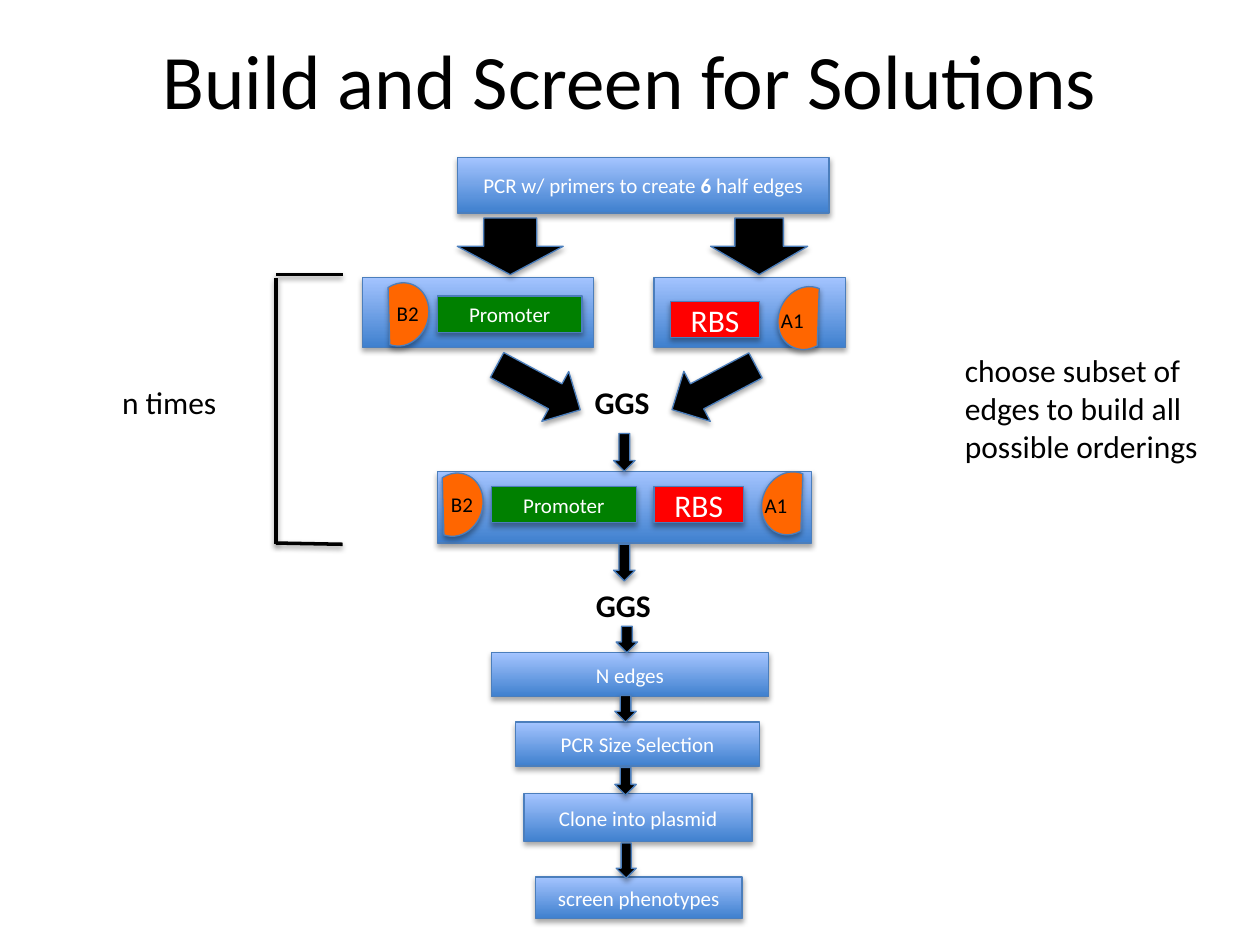
from typing import NamedTuple

from lxml.etree import SubElement
from pptx import Presentation
from pptx.dml.color import RGBColor
from pptx.enum.shapes import MSO_CONNECTOR, MSO_SHAPE
from pptx.enum.text import MSO_ANCHOR, MSO_AUTO_SIZE, PP_ALIGN
from pptx.oxml.ns import qn
from pptx.util import Inches, Pt

FONT = "Calibri"
BLACK, WHITE, OUTLINE = "000000", "FFFFFF", "4B7EBC"
GREEN, RED, ORANGE = "008000", "FF0000", "FF6600"
BLUE_GRADIENT = ("3F80CE", "A4C4FF")


class Box(NamedTuple):
    x: float
    y: float
    w: float
    h: float


class Step(NamedTuple):
    box: Box
    text: str


class Arrow(NamedTuple):
    box: Box
    kind: MSO_SHAPE = MSO_SHAPE.DOWN_ARROW
    rotation: float = 0


class Label(NamedTuple):
    box: Box
    text: str
    size: int = 18
    bold: bool = False


def rgb(value: str) -> RGBColor:
    return RGBColor.from_string(value)


def lengths(values) -> list:
    return [Inches(v) for v in values]


def add_shadow(sp, alpha: int, dist: float) -> None:
    effects = SubElement(sp._element.spPr, qn("a:effectLst"))
    shadow = SubElement(effects, qn("a:outerShdw"), blurRad=str(Pt(3.1)), dist=str(Pt(dist)),
                        dir="5400000", rotWithShape="0")
    color = SubElement(shadow, qn("a:srgbClr"), val=BLACK)
    SubElement(color, qn("a:alpha"), val=str(alpha * 1000))


def format_runs(tf, size: int, color: str, bold: bool = False) -> None:
    for p in tf.paragraphs:
        for r in p.runs:
            r.font.name, r.font.size, r.font.bold = FONT, Pt(size), bold
            r.font.color.rgb = rgb(color)


def add_shape(s, kind: MSO_SHAPE, box: Box, fill: str = "", text: str = "",
              size: int = 12, rotation: float = 0):
    """Add a shadowed shape; without a fill colour it takes the blue gradient."""
    sp = s.shapes.add_shape(kind, *lengths(box))
    sp.rotation = rotation
    if fill:
        sp.fill.solid()
        sp.fill.fore_color.rgb = rgb(fill)
    else:
        sp.fill.gradient()
        sp.fill.gradient_angle = 90
        for stop, color in zip(sp.fill.gradient_stops, BLUE_GRADIENT):
            stop.color.rgb = rgb(color)
    sp.line.color.rgb = rgb(OUTLINE)
    sp.line.width = Pt(0.75)
    add_shadow(sp, 35, 1.8)
    if text:
        tf = sp.text_frame
        tf.text = text
        tf.vertical_anchor = MSO_ANCHOR.MIDDLE
        tf.paragraphs[0].alignment = PP_ALIGN.CENTER
        format_runs(tf, size, WHITE)
    return sp


def add_label(s, label: Label):
    tb = s.shapes.add_textbox(*lengths(label.box))
    tf = tb.text_frame
    tf.word_wrap = True
    tf.auto_size = MSO_AUTO_SIZE.SHAPE_TO_FIT_TEXT
    tf.text = label.text
    format_runs(tf, label.size, BLACK, label.bold)
    return tb


def add_title(s, text: str) -> None:
    tf = add_label(s, Label(Box(0.5, 0, 9, 1.25), text, 44)).text_frame
    tf.auto_size = MSO_AUTO_SIZE.NONE
    tf.vertical_anchor = MSO_ANCHOR.MIDDLE
    tf.paragraphs[0].alignment = PP_ALIGN.CENTER


def add_promoter_edge(s, x: float, y: float) -> None:
    add_shape(s, MSO_SHAPE.CHORD, Box(x, y, 0.44, 0.51), ORANGE, rotation=199.9)
    add_shape(s, MSO_SHAPE.RECTANGLE, Box(x + 0.51, y + 0.11, 1.15, 0.29), GREEN, "Promoter")
    add_label(s, Label(Box(x + 0.09, y + 0.1, 0.58, 0.3), "B2", 12))


def add_rbs_edge(s, x: float, y: float) -> None:
    add_shape(s, MSO_SHAPE.RECTANGLE, Box(x, y + 0.12, 0.71, 0.29), RED, "RBS", 18)
    add_shape(s, MSO_SHAPE.CHORD, Box(x + 0.86, y, 0.44, 0.51), ORANGE, rotation=23.6)
    add_label(s, Label(Box(x + 0.78, y + 0.12, 0.47, 0.3), "A1", 12))


def add_line(s, *ends: float) -> None:
    c = s.shapes.add_connector(MSO_CONNECTOR.STRAIGHT, *lengths(ends))
    c.line.color.rgb = rgb(BLACK)
    c.line.width = Pt(2)
    add_shadow(c, 38, 1.6)


STEPS = [
    Step(Box(3.9, 5.18, 2.2, 0.35), "N edges"),
    Step(Box(4.09, 5.73, 1.94, 0.35), "PCR Size Selection"),
    Step(Box(4.16, 6.3, 1.81, 0.38), "Clone into plasmid"),
    Step(Box(4.25, 6.96, 1.64, 0.33), "screen phenotypes"),
]
ARROWS = [
    Arrow(Box(3.63, 1.73, 0.84, 0.45)),
    Arrow(Box(5.64, 1.73, 0.77, 0.45)),
    Arrow(Box(3.9, 2.85, 0.75, 0.45), MSO_SHAPE.RIGHT_ARROW, 28.3),
    Arrow(Box(5.29, 2.85, 0.75, 0.45), MSO_SHAPE.RIGHT_ARROW, 152.1),
    Arrow(Box(4.87, 3.44, 0.17, 0.3)),
    Arrow(Box(4.87, 4.32, 0.17, 0.29)),
    Arrow(Box(4.89, 4.97, 0.17, 0.21)),
    Arrow(Box(4.88, 5.52, 0.17, 0.21)),
    Arrow(Box(4.88, 6.09, 0.17, 0.22)),
    Arrow(Box(4.89, 6.69, 0.16, 0.28)),
]
LABELS = [
    Label(Box(4.62, 2.99, 0.82, 0.4), "GGS", bold=True),
    Label(Box(4.63, 4.6, 0.82, 0.4), "GGS", bold=True),
    Label(Box(0.87, 2.99, 1.21, 0.4), "n times"),
    Label(Box(7.56, 2.74, 2.16, 1.01), "choose subset of edges to build all possible orderings"),
]
BRACKET = [(2.72, 2.18, 2.19, 2.18), (2.19, 2.21, 2.19, 4.32), (2.19, 4.31, 2.72, 4.32)]


def main() -> None:
    prs = Presentation()
    prs.slide_width, prs.slide_height = Inches(10), Inches(7.5)
    s = prs.slides.add_slide(prs.slide_layouts[6])
    add_title(s, "Build and Screen for Solutions")

    # Starting reaction, with the count in bold
    start = add_shape(s, MSO_SHAPE.RECTANGLE, Box(3.63, 1.25, 2.95, 0.44))
    p = start.text_frame.paragraphs[0]
    p.alignment = PP_ALIGN.CENTER
    start.text_frame.vertical_anchor = MSO_ANCHOR.MIDDLE
    for text in ("PCR w/ primers to create ", "6", " half edges"):
        p.add_run().text = text
    format_runs(start.text_frame, 12, WHITE)
    p.runs[1].font.bold = True

    # Two half edges and the joined edge
    for box in (Box(2.88, 2.2, 1.83, 0.56), Box(5.19, 2.2, 1.52, 0.56), Box(3.47, 3.74, 2.97, 0.57)):
        add_shape(s, MSO_SHAPE.RECTANGLE, box)
    for x, y in ((2.96, 2.24), (3.39, 3.75)):
        add_promoter_edge(s, x, y)
    for x, y in ((5.32, 2.27), (5.19, 3.74)):
        add_rbs_edge(s, x, y)

    # Later steps, arrows, repeat bracket and labels
    for step in STEPS:
        add_shape(s, MSO_SHAPE.RECTANGLE, step.box, text=step.text)
    for arrow in ARROWS:
        add_shape(s, arrow.kind, arrow.box, BLACK, rotation=arrow.rotation)
    for ends in BRACKET:
        add_line(s, *ends)
    for label in LABELS:
        add_label(s, label)

    prs.save("out.pptx")


if __name__ == "__main__":
    main()
